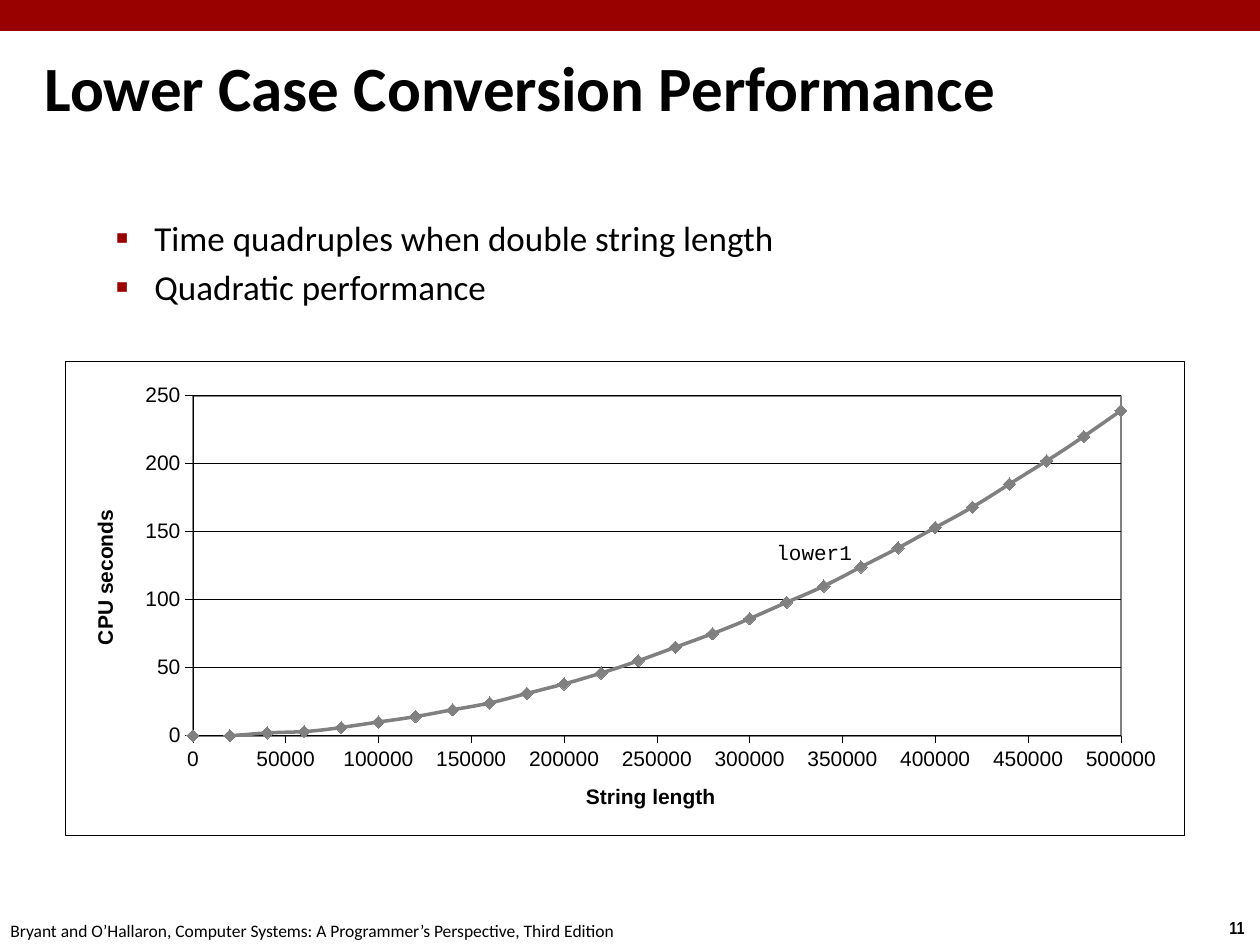
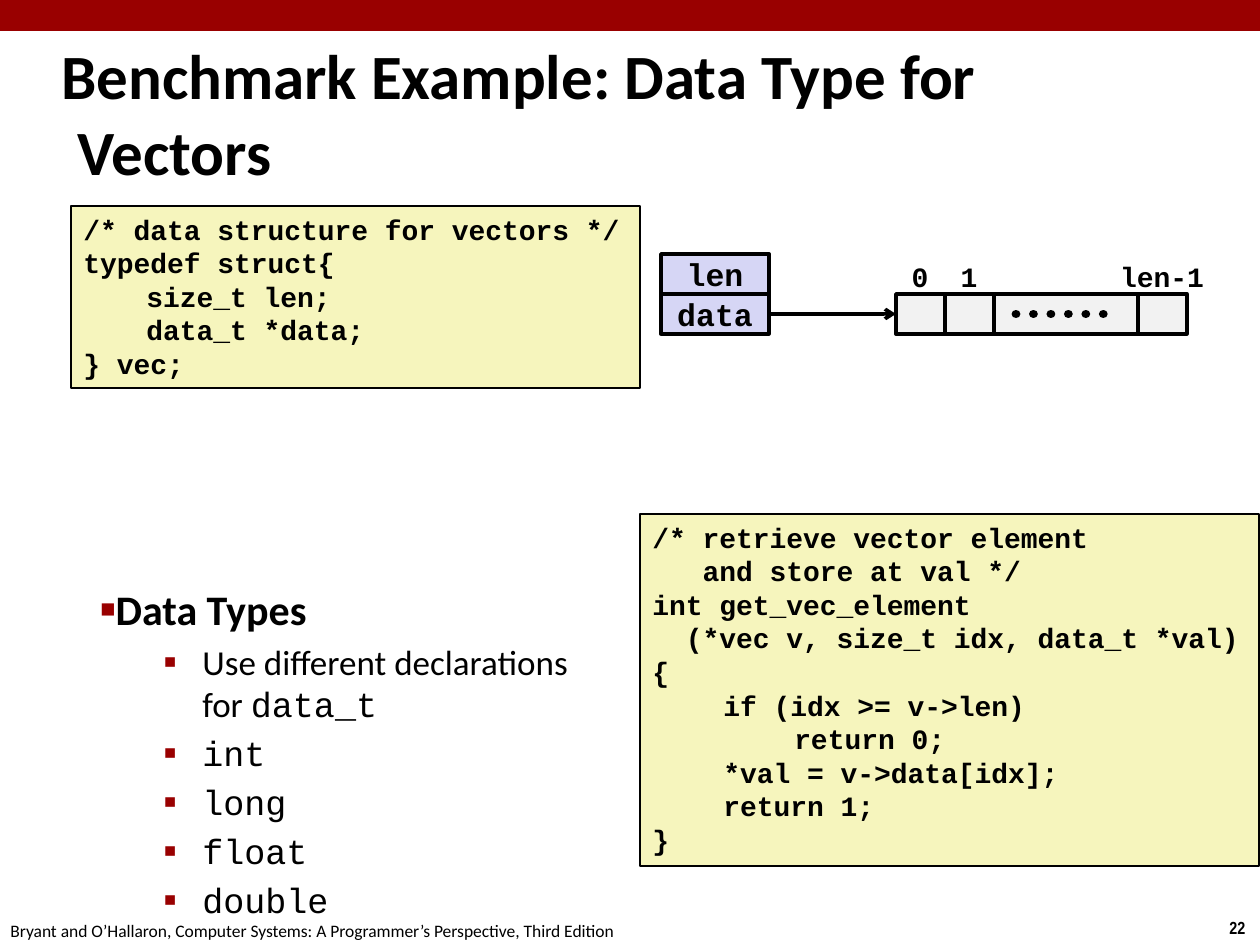
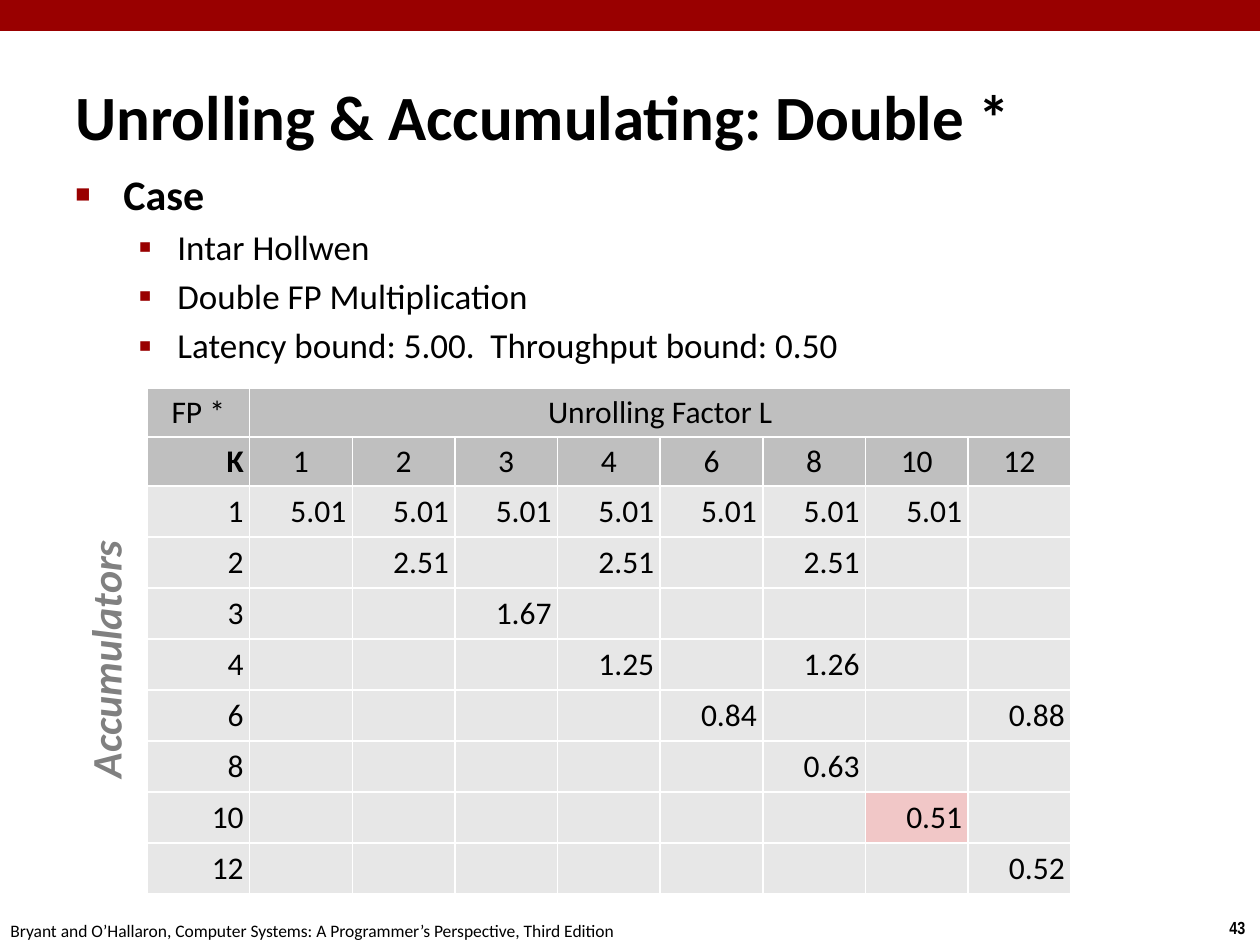
from lxml.etree import SubElement
from pptx import Presentation
from pptx.chart.data import XyChartData
from pptx.dml.color import RGBColor
from pptx.enum.chart import XL_CHART_TYPE, XL_MARKER_STYLE, XL_TICK_MARK
from pptx.enum.dml import MSO_LINE
from pptx.enum.shapes import MSO_CONNECTOR, MSO_SHAPE
from pptx.enum.text import MSO_ANCHOR, PP_ALIGN
from pptx.oxml.ns import qn
from pptx.util import Pt

PX = 7257  # EMU in one px, at 126 px to the inch
rgb = RGBColor.from_string

BLACK, WHITE, RED, GREY = "000000", "FFFFFF", "990000", "808080"
CODE_FILL, FIELD_FILL, CELL_FILL = "F6F5BD", "D6D6F5", "F2F2F2"
HEAD_FILL, BODY_FILL, BEST_FILL = "BFBFBF", "E7E7E7", "F1C7C7"

TITLE = {"name": "Calibri", "size": Pt(36), "bold": True}
HEADING = {"name": "Calibri", "size": Pt(24), "bold": True}
ITEM = {"name": "Calibri", "size": Pt(20)}
FOOTER = {"name": "Calibri", "size": Pt(10)}
NUMBER = {"name": "Arial Narrow", "size": Pt(10), "bold": True}
CODE = {"name": "Courier New", "size": Pt(16), "bold": True}
FIELD = {"name": "Courier New", "size": Pt(18), "bold": True}
CURVE = {"name": "Courier New", "size": Pt(12)}
TABLE = {"name": "Calibri", "size": Pt(18), "bold": False}
AXIS = {"name": "Arial", "size": Pt(12), "bold": False}


def add_box(page, place, lines=(), style=None, fill=None, outline=0, color=BLACK,
            align=PP_ALIGN.LEFT, anchor=MSO_ANCHOR.TOP, wrap=False):
    """Add a text box, or a rectangle when a fill is given; one paragraph per line."""
    place = [length * PX for length in place]
    if fill:
        box = page.shapes.add_shape(MSO_SHAPE.RECTANGLE, *place)
        box.shadow.inherit = False
        box.fill.solid()
        box.fill.fore_color.rgb = rgb(fill)
        if outline:
            box.line.color.rgb = rgb(BLACK)
            box.line.width = Pt(outline)
        else:
            box.line.fill.background()
    else:
        box = page.shapes.add_textbox(*place)
    frame = box.text_frame
    frame.word_wrap = wrap
    frame.vertical_anchor = anchor
    for index, line in enumerate(lines):
        para = frame.add_paragraph() if index else frame.paragraphs[0]
        para.alignment = align
        span = para.add_run()
        span.text = line
        span.font.color.rgb = rgb(color)
        for name, value in style.items():
            setattr(span.font, name, value)
    return box


def add_bullets(page, place, items, hang=0):
    """Add bulleted text; items are (level, text, code text that ends the line)."""
    frame = add_box(page, place, wrap=True).text_frame
    for index, (level, text, code) in enumerate(items):
        para = frame.add_paragraph() if index else frame.paragraphs[0]
        style = ITEM if level else HEADING
        para.level = level
        para.space_before = Pt(4 if level else 5)
        left, indent = (102, -39) if level else (hang, -hang)
        size, char = ("110000", "▪") if level else ("60000", "■")
        props = para._p.get_or_add_pPr()
        props.set("marL", str(left * PX))
        props.set("indent", str(indent * PX))
        SubElement(SubElement(props, qn("a:buClr")), qn("a:srgbClr"), val=RED)
        SubElement(props, qn("a:buSzPct"), val=size)
        SubElement(props, qn("a:buFont"), typeface="Arial")
        SubElement(props, qn("a:buChar"), char=char)
        for part, font_name in ((text, "Calibri"), (code, "Courier New")):
            if part:
                span = para.add_run()
                span.text = part
                span.font.color.rgb = rgb(BLACK)
                for name, value in {**style, "name": font_name}.items():
                    setattr(span.font, name, value)


deck = Presentation()
deck.slide_width, deck.slide_height = 1260 * PX, 945 * PX

# Band, footer, number and title of every slide
pages = []
for number, title, place in (
    ("11", "Lower Case Conversion Performance", (32, 47, 1196, 79)),
    ("22", "Benchmark Example: Data Type for Vectors", (49, 60, 1046, 105)),
    ("43", "Unrolling & Accumulating: Double *", (63, 63, 1046, 105)),
):
    page = deck.slides.add_slide(deck.slide_layouts[6])
    add_box(page, (0, 0, 1260, 31), fill=RED)
    add_box(page, (1217, 911, 43, 34), [number], NUMBER)
    add_box(page, (-2, 914, 640, 34), ["Bryant and O’Hallaron, Computer Systems: "
            "A Programmer’s Perspective, Third Edition"], FOOTER)
    heading = add_box(page, place, [title], TITLE, anchor=MSO_ANCHOR.MIDDLE, wrap=True)
    props = heading.text_frame.paragraphs[0]._p.get_or_add_pPr()
    props.set("marL", str(16 * PX))
    props.set("indent", str(-16 * PX))
    pages.append(page)
performance, vectors, unrolling = pages

# Slide 1: quadratic running time
add_bullets(performance, (40, 210, 1145, 125), [
    (1, "Time quadruples when double string length", ""),
    (1, "Quadratic performance", ""),
])
seconds = [0, 0, 2, 3, 6, 10, 14, 19, 24, 31, 38, 46, 55, 65, 75, 86, 98, 110,
           124, 138, 153, 168, 185, 202, 220, 239]
data = XyChartData()
points = data.add_series("Series 1")
for step, value in enumerate(seconds):
    points.add_data_point(step * 20000, value)
chart = performance.shapes.add_chart(
    XL_CHART_TYPE.XY_SCATTER_SMOOTH, 65 * PX, 361 * PX, 1120 * PX, 474 * PX, data).chart
chart.has_legend = False
chart.has_title = False
chart.plots[0].vary_by_categories = False
chart.font.color.rgb = rgb(BLACK)
for name, value in AXIS.items():
    setattr(chart.font, name, value)

for axis, title, top, unit in (
    (chart.category_axis, "String length", 500000, 50000),
    (chart.value_axis, "CPU seconds", 250, 50),
):
    axis.minimum_scale, axis.maximum_scale, axis.major_unit = 0, top, unit
    axis.major_tick_mark = XL_TICK_MARK.OUTSIDE
    axis.minor_tick_mark = XL_TICK_MARK.NONE
    axis.tick_labels.number_format = "General"
    axis.tick_labels.number_format_is_linked = False
    axis.format.line.color.rgb = rgb(BLACK)
    axis.format.line.width = Pt(0.25)
    para = axis.axis_title.text_frame.paragraphs[0]
    span = para.add_run()
    span.text = title
    span.font.color.rgb = rgb(BLACK)
    for name, value in {**AXIS, "bold": True}.items():
        setattr(span.font, name, value)
chart.category_axis.has_major_gridlines = False
chart.value_axis.has_major_gridlines = True
grid = chart.value_axis.major_gridlines.format.line
grid.color.rgb = rgb(BLACK)
grid.width = Pt(0.25)

series = chart.plots[0].series[0]
series.format.line.color.rgb = rgb(GREY)
series.format.line.width = Pt(2)
series.marker.style = XL_MARKER_STYLE.DIAMOND
series.marker.size = 7
series.marker.format.fill.solid()
series.marker.format.fill.fore_color.rgb = rgb(GREY)
series.marker.format.line.color.rgb = rgb(GREY)
for smooth in chart.element.iter(qn("c:smooth")):
    smooth.set("val", "1")

# Inner plot position, then the frames of the chart and of the plot
body = chart.element.find(qn("c:chart"))
plot_area = body.find(qn("c:plotArea"))
for layout in plot_area.findall(qn("c:layout")):
    plot_area.remove(layout)
layout = SubElement(plot_area, qn("c:layout"))
plot_area.insert(0, layout)
manual = SubElement(layout, qn("c:manualLayout"))
for tag, value in (("layoutTarget", "inner"), ("xMode", "edge"), ("yMode", "edge"),
                   ("x", "0.114"), ("y", "0.073"), ("w", "0.829"), ("h", "0.718")):
    SubElement(manual, qn("c:" + tag), val=value)
body.addprevious(SubElement(chart.element, qn("c:roundedCorners"), val="0"))
for parent, fill, line, width in ((chart.element, WHITE, BLACK, 0.25),
                                  (plot_area, None, GREY, 1)):
    props = SubElement(parent, qn("c:spPr"))
    if fill:
        SubElement(SubElement(props, qn("a:solidFill")), qn("a:srgbClr"), val=fill)
        body.addnext(props)
    else:
        SubElement(props, qn("a:noFill"))
    edge = SubElement(props, qn("a:ln"), w=str(Pt(width)))
    SubElement(SubElement(edge, qn("a:solidFill")), qn("a:srgbClr"), val=line)
add_box(performance, (764, 533, 130, 40), ["lower1"], CURVE)

# Slide 2: code, vector diagram and data types
for place, tab, lines in (
    ((71, 206, 569, 182), 63, [
        "/* data structure for vectors */",
        "typedef struct{",
        "\tsize_t len;",
        "\tdata_t *data;",
        "} vec;",
    ]),
    ((640, 514, 619, 352), 71, [
        "/* retrieve vector element",
        "   and store at val */",
        "int get_vec_element",
        "  (*vec v, size_t idx, data_t *val)",
        "{",
        "\tif (idx >= v->len)",
        "\t\treturn 0;",
        "\t*val = v->data[idx];",
        "\treturn 1;",
        "}",
    ]),
):
    listing = add_box(vectors, place, lines, CODE, CODE_FILL, outline=1)
    for para in listing.text_frame.paragraphs:
        stops = SubElement(para._p.get_or_add_pPr(), qn("a:tabLst"))
        for count in (1, 2):
            SubElement(stops, qn("a:tab"), pos=str(count * tab * PX), algn="l")

fields = [
    add_box(vectors, (661, top, 108, 40), [name], FIELD, FIELD_FILL, outline=2,
            align=PP_ALIGN.CENTER, anchor=MSO_ANCHOR.MIDDLE)
    for name, top in (("len", 254), ("data", 294))
]
cells = []
left = 896
for width, label in ((49, "0"), (49, "1"), (144, ""), (49, "len-1")):
    cells.append(add_box(vectors, (left, 294, width, 40), fill=CELL_FILL, outline=2))
    if label:
        add_box(vectors, (left + width // 2 - 60, 253, 120, 47), [label], CODE,
                align=PP_ALIGN.CENTER)
    left += width

pointer, dots = [
    vectors.shapes.add_connector(MSO_CONNECTOR.STRAIGHT, start * PX, 314 * PX, end * PX, 314 * PX)
    for start, end in ((769, 896), (1016, 1116))
]
pointer.begin_connect(fields[1], 3)
pointer.end_connect(cells[0], 1)
for connector, width in ((pointer, 2), (dots, 5)):
    connector.line.color.rgb = rgb(BLACK)
    connector.line.width = Pt(width)
    SubElement(connector._element.spPr, qn("a:effectLst"))
SubElement(pointer.line._get_or_add_ln(), qn("a:tailEnd"), type="arrow")
dots.line.dash_style = MSO_LINE.ROUND_DOT
dots.line._get_or_add_ln().set("cap", "rnd")

add_bullets(vectors, (88, 577, 533, 306), [
    (0, "Data Types", ""),
    (1, "Use different declarations for ", "data_t"),
    *((1, "", name) for name in ("int", "long", "float", "double")),
])

# Slide 3: table of unrolling factors and accumulators
add_bullets(unrolling, (63, 162, 1145, 195), [
    (0, "Case", ""),
    (1, "Intar Hollwen", ""),
    (1, "Double FP Multiplication", ""),
    (1, "Latency bound: 5.00.  Throughput bound: 0.50", ""),
], hang=48)

factors = ["1", "2", "3", "4", "6", "8", "10", "12"]
timings = {  # accumulators K: {unrolling factor L: cycles}
    "1": dict.fromkeys(factors[:-1], "5.01"),
    "2": {"2": "2.51", "4": "2.51", "8": "2.51"},
    "3": {"3": "1.67"},
    "4": {"4": "1.25", "8": "1.26"},
    "6": {"6": "0.84", "12": "0.88"},
    "8": {"8": "0.63"},
    "10": {"10": "0.51"},
    "12": {"12": "0.52"},
}
rows = [["FP *", "Unrolling Factor L"] + [""] * 7, ["K"] + factors]
rows += [[k] + [timings[k].get(factor, "") for factor in factors] for k in factors]
frame = unrolling.shapes.add_table(len(rows), 9, 147 * PX, 388 * PX, 924 * PX, 506 * PX)
table = frame.table
for column in table.columns:
    column.width = 924 * PX // 9
for r, row in enumerate(rows):
    table.rows[r].height = (49 if r < 2 else 51) * PX
    for c, text in enumerate(row):
        cell = table.cell(r, c)
        cell.margin_left = cell.margin_right = 6 * PX
        cell.margin_top = cell.margin_bottom = 4 * PX
        cell.vertical_anchor = MSO_ANCHOR.MIDDLE
        for side in ("L", "R", "T", "B"):
            edge = SubElement(cell._tc.get_or_add_tcPr(), qn("a:ln" + side), w=str(Pt(1)))
            SubElement(SubElement(edge, qn("a:solidFill")), qn("a:srgbClr"), val=WHITE)
        cell.fill.solid()
        cell.fill.fore_color.rgb = rgb(
            HEAD_FILL if r < 2 else BEST_FILL if text == "0.51" else BODY_FILL)
        para = cell.text_frame.paragraphs[0]
        centred = r == 0 or (r == 1 and c > 0)
        para.alignment = PP_ALIGN.CENTER if centred else PP_ALIGN.RIGHT
        para.line_spacing = 0.95
        if text:
            span = para.add_run()
            span.text = text
            span.font.color.rgb = rgb(BLACK)
            for name, value in {**TABLE, "bold": text == "K"}.items():
                setattr(span.font, name, value)
table.cell(0, 1).merge(table.cell(0, 8))

side_label = add_box(unrolling, (-28, 626, 266, 63), ["Accumulators"],
                     {**HEADING, "italic": True}, color=GREY)
side_label.rotation = 270

deck.save("out.pptx")
